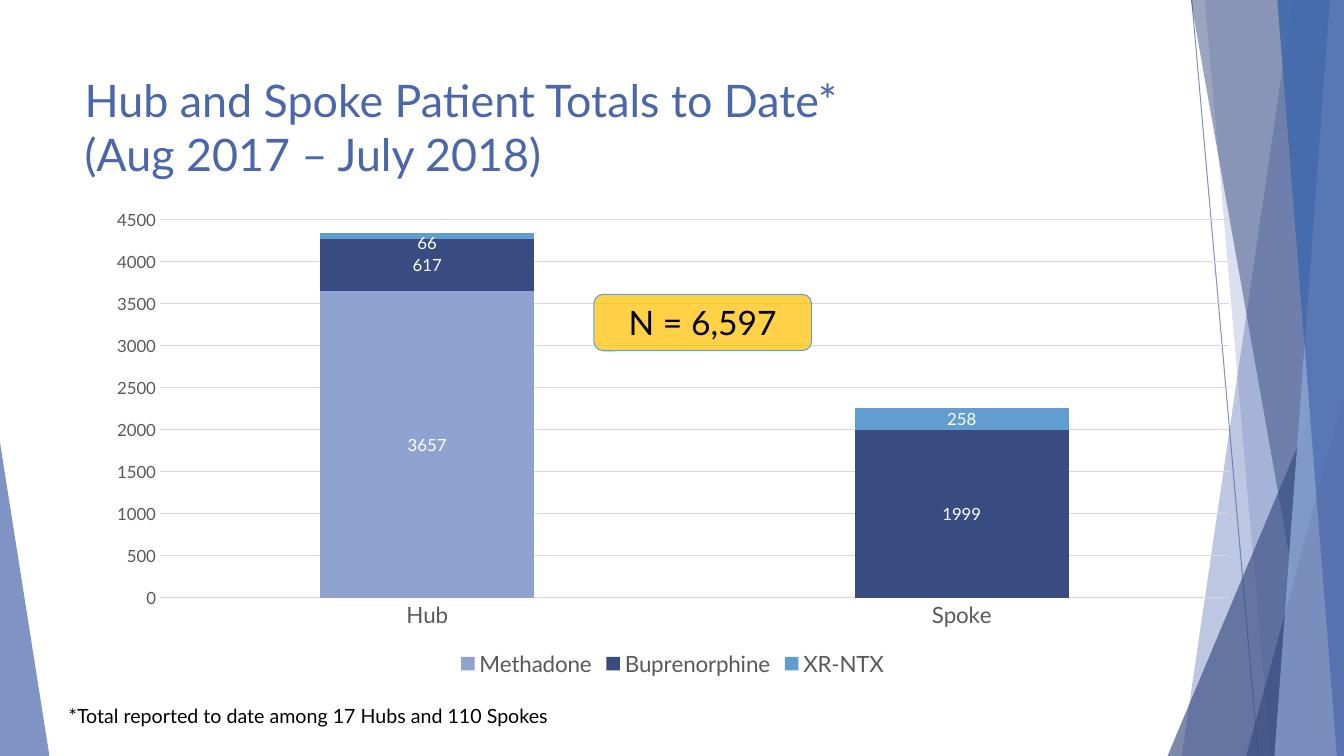
from lxml.etree import SubElement
from pptx import Presentation
from pptx.chart.data import CategoryChartData
from pptx.dml.color import RGBColor
from pptx.enum.chart import XL_CHART_TYPE, XL_LEGEND_POSITION, XL_TICK_MARK
from pptx.enum.shapes import MSO_CONNECTOR, MSO_SHAPE
from pptx.enum.text import MSO_ANCHOR, PP_ALIGN
from pptx.oxml import parse_xml
from pptx.oxml.ns import nsdecls, qn
from pptx.util import Inches, Pt

BLUE = RGBColor(0x4A, 0x66, 0xAC)
NAVY = RGBColor(0x38, 0x4C, 0x81)
SKY = RGBColor(0x62, 0x9D, 0xD1)
STEEL = RGBColor(0x34, 0x77, 0xB2)
PERIWINKLE = RGBColor(0x90, 0xA2, 0xCF)
GOLD = RGBColor(0xFF, 0xC0, 0x00)
BLACK = RGBColor(0, 0, 0)
WHITE = RGBColor(0xFF, 0xFF, 0xFF)
GRAY = RGBColor(0x59, 0x59, 0x59)
GRID = RGBColor(0xD9, 0xD9, 0xD9)
WIDTH, HEIGHT = 13.33, 7.5


def set_opacity(shape, percent):
    color = shape.element.xpath(".//a:srgbClr")[0]
    SubElement(color, qn("a:alpha"), val=str(percent * 1000))


def style_font(font, size, color):
    for name, value in {"name": "Lato", "size": Pt(size), "bold": False}.items():
        setattr(font, name, value)
    font.color.rgb = color


prs = Presentation()
prs.slide_width, prs.slide_height = Inches(WIDTH), Inches(HEIGHT)
slide = prs.slides.add_slide(prs.slide_layouts[6])
shapes = slide.shapes

ray = shapes.add_connector(
    MSO_CONNECTOR.STRAIGHT, Inches(11.82), 0, Inches(12.48), Inches(HEIGHT))
ray.line.color.rgb = BLUE
ray.line.width = Pt(0.75)
set_opacity(ray, 70)
SubElement(ray.element.spPr, qn("a:effectLst"))

facets = [
    ("triangle", (0, 4.39, 0.49, 0), BLUE, 70),
    ("band", (12.82, 11.72), BLUE, 36),
    ("band", (11.95, 12.6), BLUE, 20),
    ("triangle", (11.58, 3.33, 1.75, 1), NAVY, 66),
    ("band", (11.81, 13.14), NAVY, 50),
    ("band", (13.19, 12.64), SKY, 70),
    ("band", (12.67, 13.26), STEEL, 80),
    ("triangle", (12.36, 3.93, 0.97, 1), NAVY, 66),
    ("band", (13.19, 12.64), PERIWINKLE, 70),
    ("band", (12.67, 13.26), BLUE, 65),
]
for kind, geometry, color, opacity in facets:
    if kind == "triangle":
        left, top, width, apex = geometry
        facet = shapes.add_shape(
            MSO_SHAPE.ISOSCELES_TRIANGLE, Inches(left), Inches(top),
            Inches(width), Inches(HEIGHT - top))
        facet.adjustments[0] = apex
    else:
        top_x, bottom_x = geometry
        outline = shapes.build_freeform(Inches(top_x), 0)
        corners = [(WIDTH, 0), (WIDTH, HEIGHT), (bottom_x, HEIGHT)]
        outline.add_line_segments([(Inches(x), Inches(y)) for x, y in corners])
        facet = outline.convert_to_shape()
    facet.shadow.inherit = False
    facet.fill.solid()
    facet.fill.fore_color.rgb = color
    set_opacity(facet, opacity)
    facet.line.fill.background()

totals = CategoryChartData()
totals.categories = ["Hub", "Spoke"]
medications = [
    ("Methadone", (3657, None), PERIWINKLE),
    ("Buprenorphine", (617, 1999), NAVY),
    ("XR-NTX", (66, 258), SKY),
]
for medication, patients, color in medications:
    totals.add_series(medication, patients)
chart = shapes.add_chart(
    XL_CHART_TYPE.COLUMN_STACKED, Inches(0.92), Inches(2), Inches(11.5),
    Inches(4.76), totals).chart
style_font(chart.font, 10, BLACK)
chart.has_title = False
chart.has_legend = True
chart.legend.position = XL_LEGEND_POSITION.BOTTOM
chart.legend.include_in_layout = False
style_font(chart.legend.font, 16, GRAY)

patient_axis = chart.value_axis
patient_axis.minimum_scale, patient_axis.maximum_scale = 0, 4500
patient_axis.major_unit = 500
patient_axis.format.line.fill.background()
for axis, size in ((chart.category_axis, 16), (patient_axis, 12)):
    axis.major_tick_mark = axis.minor_tick_mark = XL_TICK_MARK.NONE
    style_font(axis.tick_labels.font, size, GRAY)
for rule in (chart.category_axis.format.line, patient_axis.major_gridlines.format.line):
    rule.color.rgb = GRID
    rule.width = Pt(0.75)

plot = chart.plots[0]
plot.gap_width, plot.overlap = 150, 100
plot.vary_by_categories = False
for series, (medication, patients, color) in zip(plot.series, medications):
    series.format.fill.solid()
    series.format.fill.fore_color.rgb = color
    series.data_labels.show_value = True
    style_font(series.data_labels.font, 12, WHITE)

hub_label = plot.series[2].points[0].data_label
style_font(hub_label.font, 12, WHITE)
hub_label_xml = plot.series[2].data_labels._element.find(qn("c:dLbl"))
hub_label_xml.insert(1, parse_xml(
    f'<c:layout {nsdecls("c")}><c:manualLayout>'
    '<c:x val="0"/><c:y val="0.014"/></c:manualLayout></c:layout>'))

plot_area = chart.element.xpath("c:chart/c:plotArea")[0]
for layout in plot_area.findall(qn("c:layout")):
    plot_area.remove(layout)
plot_area.insert(0, parse_xml(
    f'<c:layout {nsdecls("c")}><c:manualLayout><c:layoutTarget val="inner"/>'
    '<c:xMode val="edge"/><c:yMode val="edge"/><c:x val="0.058"/>'
    '<c:y val="0.038"/><c:w val="0.922"/><c:h val="0.788"/>'
    '</c:manualLayout></c:layout>'))

title = shapes.add_textbox(Inches(0.74), Inches(0.67), Inches(10.9), Inches(1.44))
patient_count = shapes.add_shape(
    MSO_SHAPE.ROUNDED_RECTANGLE, Inches(5.89), Inches(2.92), Inches(2.16), Inches(0.56))
patient_count.shadow.inherit = False
patient_count.fill.solid()
patient_count.fill.fore_color.rgb = GOLD
set_opacity(patient_count, 72)
patient_count.line.color.rgb = SKY
patient_count.line.width = Pt(0.75)
footnote = shapes.add_textbox(Inches(0.23), Inches(6.93), Inches(5.66), Inches(0.34))

for box, words, size, color, alignment, anchor in (
    (title, "Hub and Spoke Patient Totals to Date*\v(Aug 2017 – July 2018)",
     32, BLUE, PP_ALIGN.LEFT, MSO_ANCHOR.TOP),
    (patient_count, "N = 6,597", 24, BLACK, PP_ALIGN.CENTER, MSO_ANCHOR.MIDDLE),
    (footnote, "*Total reported to date among 17 Hubs and 110 Spokes",
     14, BLACK, PP_ALIGN.CENTER, MSO_ANCHOR.TOP),
):
    frame = box.text_frame
    frame.word_wrap = True
    frame.vertical_anchor = anchor
    paragraph = frame.paragraphs[0]
    paragraph.text = words
    paragraph.alignment = alignment
    for run in paragraph.runs:
        style_font(run.font, size, color)

prs.save("out.pptx")
